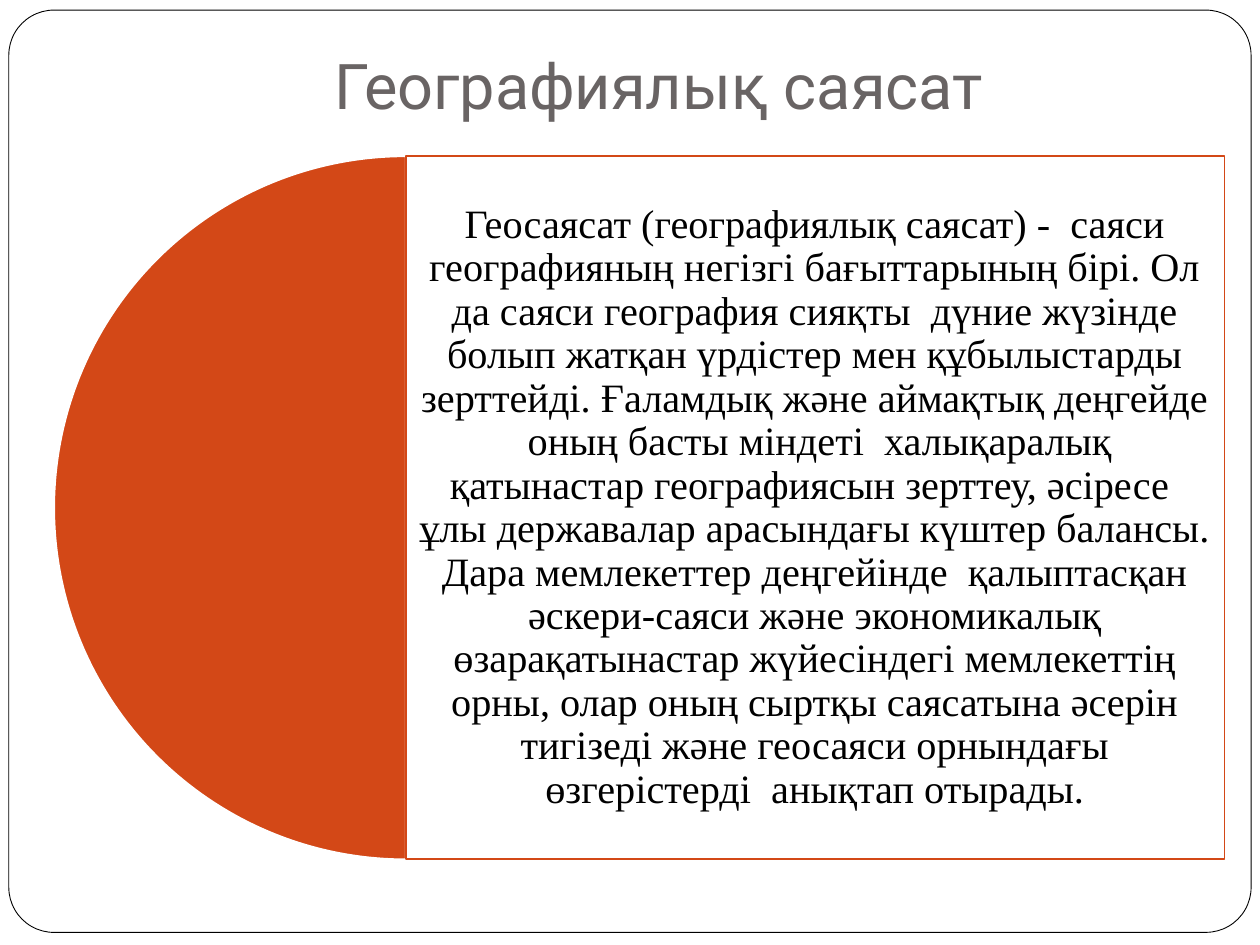
from lxml import etree
from pptx import Presentation
from pptx import util as u
from pptx.dml.color import RGBColor
from pptx.enum import shapes, text
from pptx.oxml.ns import qn

WHITE = RGBColor(0xFF, 0xFF, 0xFF)
BLACK = RGBColor(0x00, 0x00, 0x00)
GRAY = RGBColor(0x69, 0x64, 0x64)
RUST = RGBColor(0xD3, 0x48, 0x17)

TITLE = "Географиялық саясат"
BODY = (
    "Геосаясат (географиялық саясат) -  саяси географияның негізгі "
    "бағыттарының бірі. Ол да саяси география сияқты  дүние жүзінде болып "
    "жатқан үрдістер мен құбылыстарды зерттейді. Ғаламдық және аймақтық "
    "деңгейде  оның басты міндеті  халықаралық қатынастар географиясын "
    "зерттеу, әсіресе  ұлы державалар арасындағы күштер балансы. Дара "
    "мемлекеттер деңгейінде  қалыптасқан әскери-саяси және экономикалық "
    "өзарақатынастар жүйесіндегі мемлекеттің орны, олар оның сыртқы "
    "саясатына әсерін тигізеді және геосаяси орнындағы өзгерістерді  "
    "анықтап отырады."
)


def add_form(slide, kind, box, fill, line, width):
    form = slide.shapes.add_shape(kind, *map(u.Inches, box))
    form.shadow.inherit = False
    form.fill.solid()
    form.fill.fore_color.rgb = fill
    form.line.color.rgb = line
    form.line.width = u.Pt(width)
    return form


def set_text(form, words, font, size, color, anchor, pads):
    frame = form.text_frame
    frame.word_wrap = True
    frame.auto_size = text.MSO_AUTO_SIZE.NONE
    frame.vertical_anchor = anchor
    (frame.margin_left, frame.margin_top,
     frame.margin_right, frame.margin_bottom) = map(u.Inches, pads)
    frame.text = words
    para = frame.paragraphs[0]
    para.alignment = text.PP_ALIGN.CENTER
    para.font.name = font
    para.font.size = u.Pt(size)
    para.font.color.rgb = color
    return para


def add_frame(slide, box):
    frame = add_form(slide, shapes.MSO_SHAPE.ROUNDED_RECTANGLE, box, WHITE, BLACK, 0.5)
    frame.adjustments[0] = 0.049
    slide.shapes.title.element.addprevious(frame.element)


def add_title(slide, box):
    title = slide.shapes.title
    title.left, title.top, title.width, title.height = map(u.Inches, box)
    set_text(title, TITLE, "Roboto", 36, GRAY,
             text.MSO_ANCHOR.BOTTOM, (0.1, 0.05, 0.1, 0.1))


def add_panel(slide, box):
    left, top, width, height = box
    half = height / 2
    pie = add_form(slide, shapes.MSO_SHAPE.PIE, (left, top, height, height), RUST, WHITE, 1)
    pie.adjustments[0], pie.adjustments[1] = 54, 162
    card = add_form(slide, shapes.MSO_SHAPE.RECTANGLE,
                    (left + half, top, width - half, height), WHITE, RUST, 1)
    tint = card.element.spPr.find(qn("a:solidFill"))[0]
    etree.SubElement(tint, qn("a:alpha")).set("val", "90000")
    para = set_text(card, BODY, "Times New Roman", 23, BLACK,
                    text.MSO_ANCHOR.MIDDLE, (0.1,) * 4)
    para.line_spacing = 0.9


def main():
    deck = Presentation()
    deck.slide_width, deck.slide_height = u.Inches(10), u.Inches(7.5)
    slide = deck.slides.add_slide(deck.slide_layouts[5])
    add_frame(slide, (0.07, 0.08, 9.86, 7.32))
    add_title(slide, (0.98, 0.44, 8.5, 0.63))
    add_panel(slide, (0.43, 1.24, 9.29, 5.58))
    deck.save("out.pptx")


if __name__ == "__main__":
    main()
